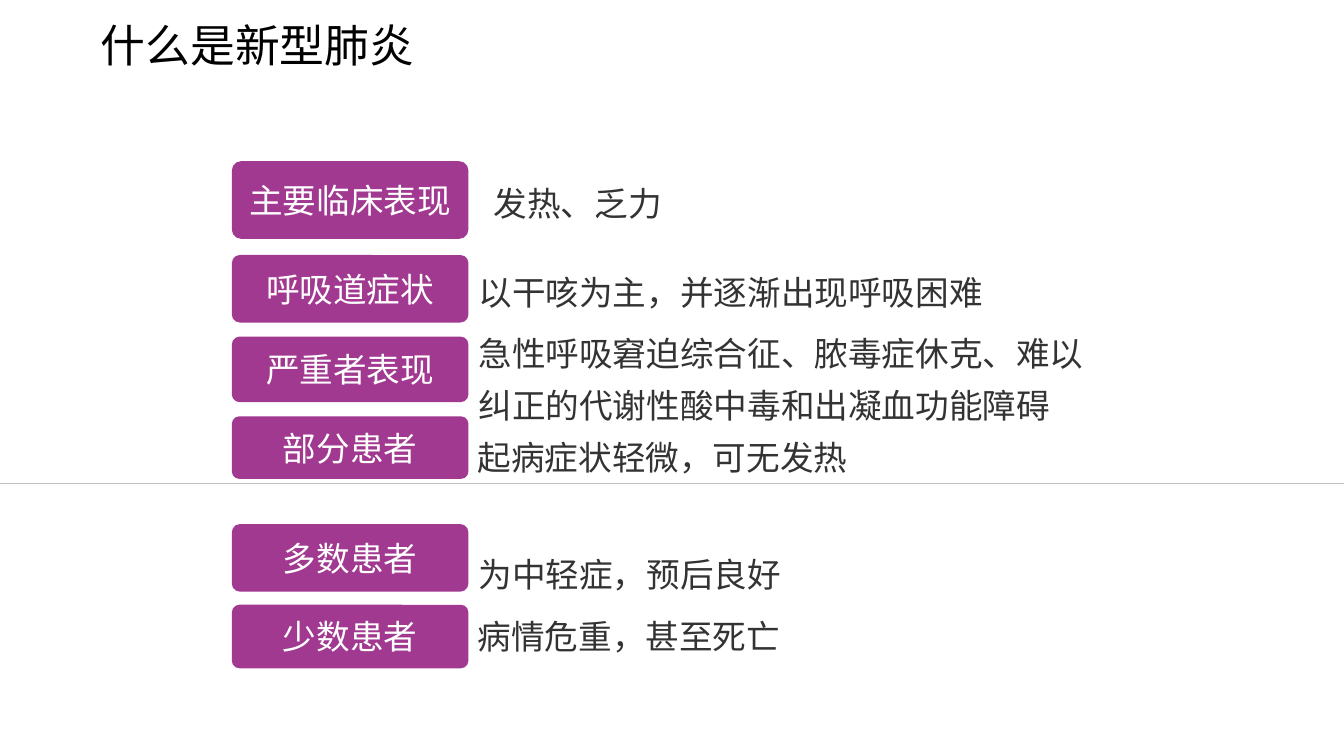
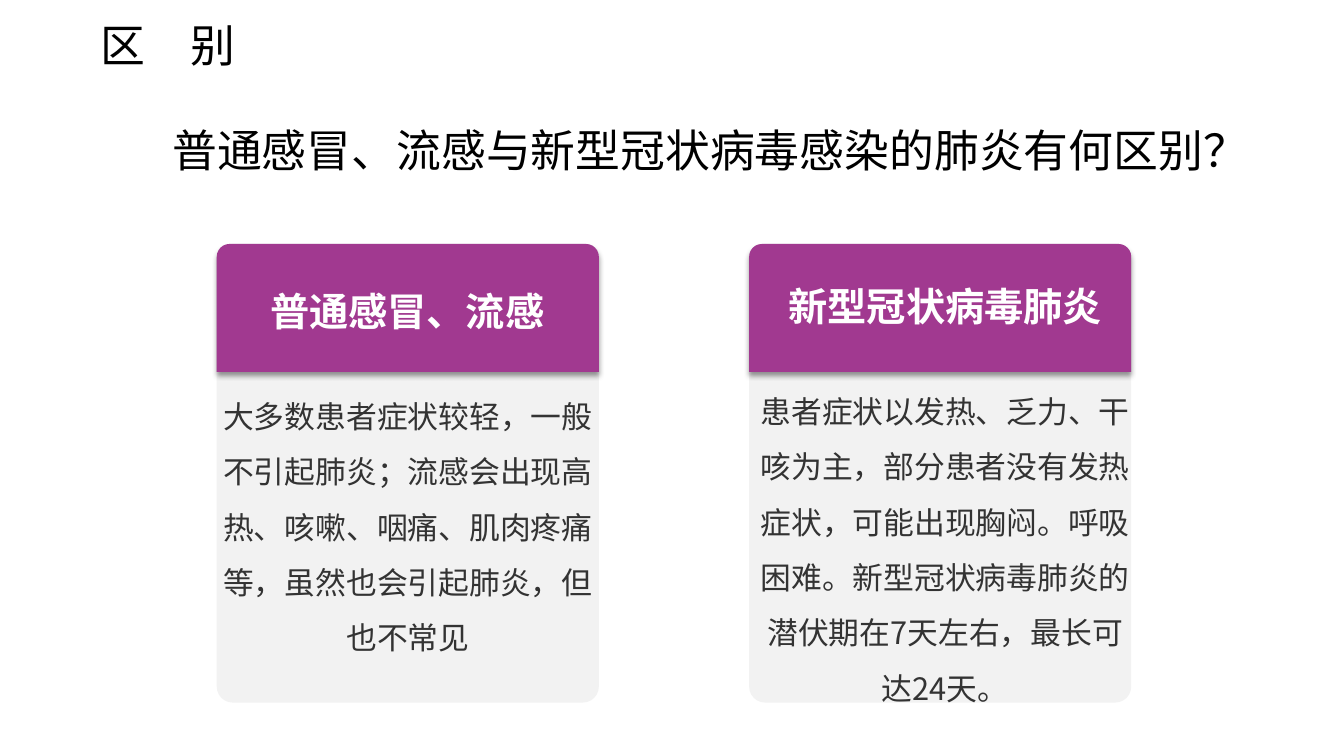
from lxml import etree
from pptx import Presentation
from pptx.dml.color import RGBColor as RGB
from pptx.enum.shapes import MSO_CONNECTOR as LINE, MSO_SHAPE as SHAPE
from pptx.enum.text import MSO_ANCHOR as ANCHOR, MSO_AUTO_SIZE as FIT, PP_ALIGN as ALIGN
from pptx.oxml import parse_xml
from pptx.oxml.ns import nsdecls, qn
from pptx.util import Inches, Pt

# Shared look
FACE = "Noto Sans CJK SC"
HUE = {"brand": "A13990", "panel": "F2F2F2", "rule": "BFBFBF",
       "text": "333333", "title": "000000", "white": "FFFFFF"}
STYLE = {
    "title": {"size": Pt(32), "hue": "title"},
    "label": {"size": Pt(24), "hue": "white", "align": ALIGN.CENTER},
    "note": {"size": Pt(24), "hue": "text"},
    "loose": {"size": Pt(24), "hue": "text", "lead": 1.3},
    "head": {"size": Pt(28), "hue": "white", "align": ALIGN.CENTER, "bold": True},
    "body": {"size": Pt(22), "hue": "text", "align": ALIGN.CENTER, "lead": 1.5, "inset": 0},
}

deck = Presentation()
deck.slide_width, deck.slide_height = Inches(13.33), Inches(7.5)
# Grid: 100 columns by 100 rows
COL, ROW = deck.slide_width / 100, deck.slide_height / 100


def block(slide, kind, box, hue, adjust):
    """Add a filled preset shape on the grid."""
    x, y, w, h = box
    shape = slide.shapes.add_shape(
        kind, int(x * COL), int(y * ROW), int(w * COL), int(h * ROW))
    for i, value in enumerate(adjust):
        shape.adjustments[i] = value
    shape.fill.solid()
    shape.fill.fore_color.rgb = RGB.from_string(HUE[hue])
    shape.line.fill.background()
    shape.shadow.inherit = False
    return shape


def write(target, text, style, box=None):
    """Write styled text into a shape, or into a new box on a slide."""
    look = STYLE[style]
    if box:
        x, y, w, h = box
        target = target.shapes.add_textbox(
            int(x * COL), int(y * ROW), int(w * COL), int(h * ROW))
    frame = target.text_frame
    frame.word_wrap = True
    frame.auto_size = FIT.SHAPE_TO_FIT_TEXT if box else FIT.NONE
    frame.vertical_anchor = ANCHOR.TOP if box else ANCHOR.MIDDLE
    if "inset" in look:
        for side in ("left", "right", "top", "bottom"):
            setattr(frame, f"margin_{side}", look["inset"])
    para = frame.paragraphs[0]
    para.alignment = look.get("align", ALIGN.LEFT)
    para.line_spacing = look.get("lead")
    run = para.add_run()
    run.text = text
    font = {"name": FACE, "size": look["size"], "bold": look.get("bold", False)}
    for key, value in font.items():
        setattr(run.font, key, value)
    run.font.color.rgb = RGB.from_string(HUE[look["hue"]])
    etree.SubElement(run.font._element, qn("a:ea"), typeface=FACE)


# Slides with their titles
pages = []
for title in ("什么是新型肺炎", "区　别"):
    page = deck.slides.add_slide(deck.slide_layouts[6])
    write(page, title, "title", (6.75, 1.73, 27.76, 8.53))
    pages.append(page)
signs, versus = pages

# Symptoms: label, its top and height, then note, style and box
rows = [
    ("主要临床表现", 21.33, 10.27, "发热、乏力", "note", (36, 23.6, 19.05, 6.67)),
    ("呼吸道症状", 33.73, 8.93, "以干咳为主，并逐渐出现呼吸困难", "loose",
     (34.87, 33.73, 47.85, 8.27)),
    ("严重者表现", 44.53, 8.67,
     "急性呼吸窘迫综合征、脓毒症休克、难以纠正的代谢性酸中毒和出凝血功能障碍", "loose",
     (34.87, 41.73, 46.81, 15.33)),
    ("部分患者", 55.07, 8.27, "起病症状轻微，可无发热", "loose",
     (34.8, 55.6, 30.4, 8.27)),
    ("多数患者", 69.33, 8.93, "为中轻症，预后良好", "loose",
     (34.87, 71.07, 41.7, 8.27)),
    ("少数患者", 80, 8.4, "病情危重，甚至死亡", "note",
     (34.8, 80.8, 39.8, 6.67)),
]
for label, top, high, note, style, box in rows:
    tag = block(signs, SHAPE.ROUNDED_RECTANGLE, (17.25, top, 17.6, high), "brand", [0.118])
    write(tag, label, "label")
    write(signs, note, style, box)

# Rule between symptoms and outlook
rule = signs.shapes.add_connector(
    LINE.STRAIGHT, 0, int(64 * ROW), deck.slide_width, int(64 * ROW))
rule.line.color.rgb = RGB.from_string(HUE["rule"])
rule.line.width = Pt(0.75)
etree.SubElement(rule._element.spPr, qn("a:effectLst"))

# Question
write(versus, "普通感冒、流感与新型冠状病毒感染的肺炎有何区别？", "title",
      (12.08, 15.6, 78.32, 8.53))

# Cards: left edge, head and its box, body and its box
WIDE, TOP = 28.43, 32.27
SHADE = (f'<a:effectLst {nsdecls("a")}><a:outerShdw blurRad="{Pt(4)}" dist="{Pt(3)}" '
         'dir="5400000" algn="t" rotWithShape="0"><a:srgbClr val="000000">'
         '<a:alpha val="40000"/></a:srgbClr></a:outerShdw></a:effectLst>')
cards = [
    (16.13, "普通感冒、流感", (19.2, 37.33, 22.2, 7.6),
     "大多数患者症状较轻，一般不引起肺炎；流感会出现高热、咳嗽、咽痛、肌肉疼痛等，"
     "虽然也会引起肺炎，但也不常见", (16.13, 50.13, WIDE, 37.07)),
    (55.74, "新型冠状病毒肺炎", (56.94, 36.67, 26.78, 7.6),
     "患者症状以发热、乏力、干咳为主，部分患者没有发热症状，可能出现胸闷。呼吸困难。"
     "新型冠状病毒肺炎的潜伏期在7天左右，最长可达24天。", (56.11, 49.47, WIDE, 44.4)),
]
for left, head, spot, body, area in cards:
    block(versus, SHAPE.ROUNDED_RECTANGLE, (left, TOP, WIDE, 60.67), "panel", [0.042])
    band = block(versus, SHAPE.ROUND_2_SAME_RECTANGLE, (left, TOP, WIDE, 16.93),
                 "brand", [0.1, 0])
    props = band._element.spPr
    props.replace(props.find(qn("a:effectLst")), parse_xml(SHADE))
    write(versus, head, "head", spot)
    write(versus, body, "body", area)

deck.save("out.pptx")
